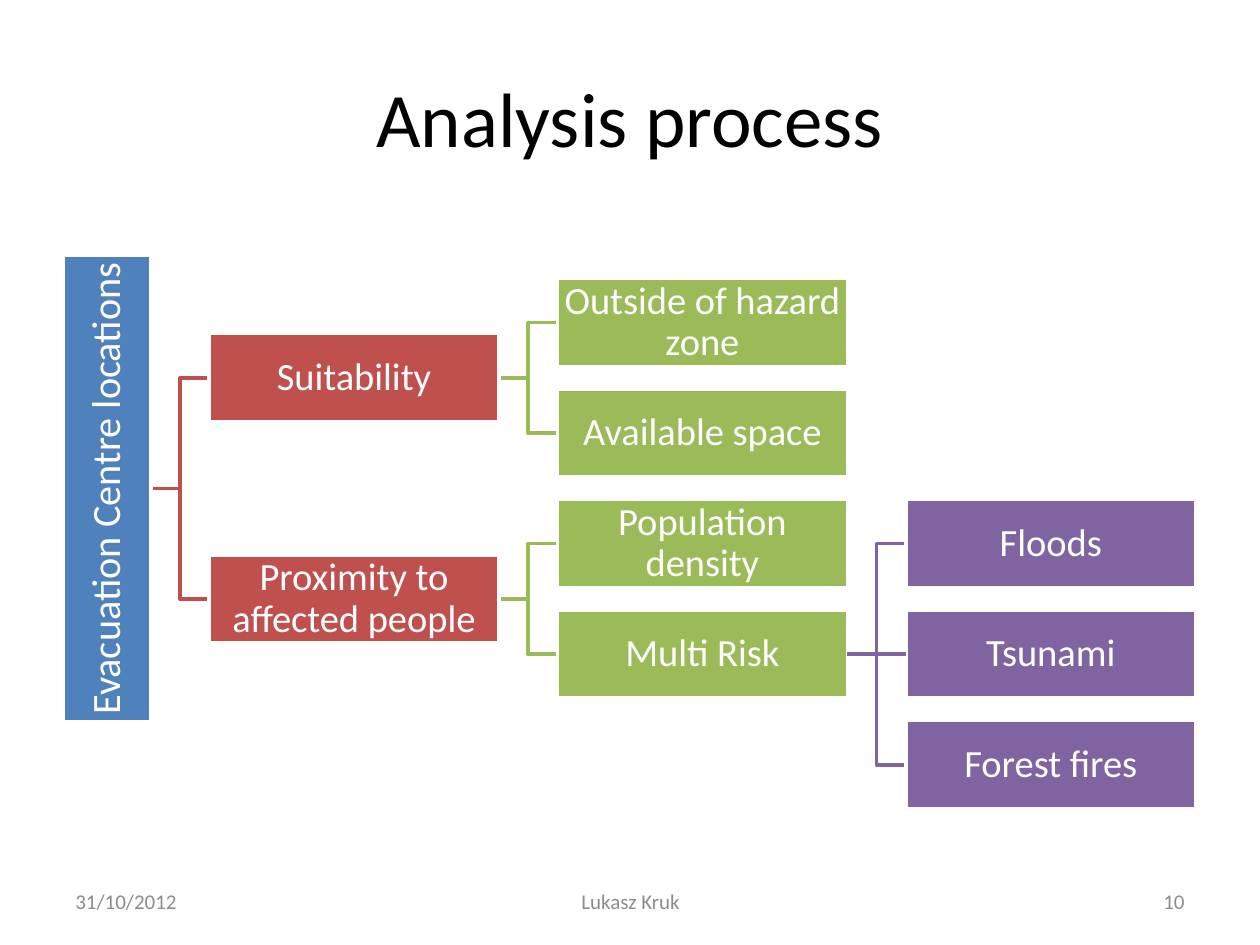
"""Build the Analysis process slide, a horizontal tree of evacuation criteria."""
import dataclasses
import typing

import pptx
import pptx.dml.color
import pptx.enum.shapes
import pptx.enum.text
import pptx.util

Inches = pptx.util.Inches
ALIGN = pptx.enum.text.PP_ALIGN
MIDDLE = pptx.enum.text.MSO_ANCHOR.MIDDLE

FONT = "Calibri"
LEVEL_COLOURS = ["4F81BD", "C0504D", "9BBB59", "8064A2"]
WHITE = "FFFFFF"
BLACK = "000000"
GREY = "8C8C8C"
BOX_WIDTH, BOX_HEIGHT = 2.3, 0.7
ROOT_LENGTH, ROOT_CENTRE = 3.7, 0.85
FIRST_LEFT, COLUMN_STEP = 1.66, 5.53 / 2
FIRST_CENTRE, ROW_STEP = 2.56, 3.51 / 8
LINE_WIDTH = 2
BOX_FRAME = {
    "word_wrap": True,
    "vertical_anchor": MIDDLE,
    "margin_left": Inches(0.02),
    "margin_right": Inches(0.02),
    "margin_top": Inches(0.02),
    "margin_bottom": Inches(0.02),
}
FOOTER_FRAME = {"word_wrap": True, "vertical_anchor": MIDDLE}


@dataclasses.dataclass
class Node:
    label: str
    leaf_row: int = 0
    children: list["Node"] = dataclasses.field(default_factory=list)

    @property
    def row(self) -> float:
        if not self.children:
            return self.leaf_row
        return sum(child.row for child in self.children) / len(self.children)

    @property
    def centre(self) -> float:
        return FIRST_CENTRE + self.row * ROW_STEP


@dataclasses.dataclass
class Footer:
    text: str
    left: float
    width: float
    alignment: typing.Any


TREE = Node("Evacuation Centre locations", children=[
    Node("Suitability", children=[
        Node("Outside of hazard zone", 0),
        Node("Available space", 2),
    ]),
    Node("Proximity to affected people", children=[
        Node("Population density", 4),
        Node("Multi Risk", children=[
            Node("Floods", 4),
            Node("Tsunami", 6),
            Node("Forest fires", 8),
        ]),
    ]),
])

FOOTERS = [
    Footer("31/10/2012", 0.5, 2.33, ALIGN.LEFT),
    Footer("Lukasz Kruk", 3.42, 3.17, ALIGN.CENTER),
    Footer("10", 7.17, 2.33, ALIGN.RIGHT),
]


def rgb(value: str) -> pptx.dml.color.RGBColor:
    return pptx.dml.color.RGBColor.from_string(value)


def apply_format(target: typing.Any, values: dict) -> None:
    for name, value in values.items():
        setattr(target, name, value)


def write_text(shape, text: str, size: float, colour: str, frame: dict, paragraph_format: dict) -> None:
    apply_format(shape.text_frame, frame)
    paragraph = shape.text_frame.paragraphs[0]
    apply_format(paragraph, paragraph_format)
    run = paragraph.add_run()
    run.text = text
    apply_format(run.font, {"name": FONT, "size": pptx.util.Pt(size)})
    run.font.color.rgb = rgb(colour)


def style_line(shape, colour: str) -> None:
    shape.line.width = pptx.util.Pt(LINE_WIDTH)
    shape.line.color.rgb = rgb(colour)


def column_left(level: int) -> float:
    return FIRST_LEFT + (level - 1) * COLUMN_STEP


def right_edge(level: int) -> float:
    return column_left(level) + BOX_WIDTH if level else ROOT_CENTRE + BOX_HEIGHT / 2


def draw_branch(slide, parent: Node, child: Node, level: int) -> None:
    start, end = right_edge(level), column_left(level + 1)
    middle = (start + end) / 2
    points = [(start, parent.centre), (middle, parent.centre), (middle, child.centre), (end, child.centre)]
    corners = [(Inches(x), Inches(y)) for x, y in points]
    builder = slide.shapes.build_freeform(*corners[0], scale=1.0)
    builder.add_line_segments(corners[1:], close=False)
    branch = builder.convert_to_shape()
    branch.shadow.inherit = False
    branch.fill.background()
    style_line(branch, LEVEL_COLOURS[level + 1])


def draw_branches(slide, node: Node, level: int = 0) -> None:
    for child in node.children:
        if child.row != node.row:
            draw_branch(slide, node, child, level)
        draw_branches(slide, child, level + 1)


def draw_box(slide, node: Node, level: int):
    width = BOX_WIDTH if level else ROOT_LENGTH
    left = column_left(level) if level else ROOT_CENTRE - ROOT_LENGTH / 2
    box = slide.shapes.add_shape(
        pptx.enum.shapes.MSO_SHAPE.RECTANGLE,
        Inches(left), Inches(node.centre - BOX_HEIGHT / 2), Inches(width), Inches(BOX_HEIGHT),
    )
    box.rotation = 0 if level else 270
    box.shadow.inherit = False
    box.fill.solid()
    box.fill.fore_color.rgb = rgb(LEVEL_COLOURS[level])
    style_line(box, WHITE)
    write_text(box, node.label, 22 if level else 23, WHITE, BOX_FRAME,
               {"alignment": ALIGN.CENTER, "line_spacing": 0.9})
    return box


def join_boxes(slide, parent_box, child_box, colour: str) -> None:
    connector = slide.shapes.add_connector(pptx.enum.shapes.MSO_CONNECTOR.STRAIGHT, 0, 0, 0, 0)
    connector.begin_connect(parent_box, 3)
    connector.end_connect(child_box, 1)
    style_line(connector, colour)
    properties = connector.line._get_or_add_ln().getparent()
    properties.append(properties.makeelement(pptx.oxml.ns.qn("a:effectLst"), {}))


def draw_boxes(slide, node: Node, level: int = 0):
    box = draw_box(slide, node, level)
    for child in node.children:
        child_box = draw_boxes(slide, child, level + 1)
        if child.row == node.row:
            join_boxes(slide, box, child_box, LEVEL_COLOURS[level + 1])
    return box


def draw_footer(slide, footer: Footer) -> None:
    box = slide.shapes.add_textbox(Inches(footer.left), Inches(6.95), Inches(footer.width), Inches(0.4))
    write_text(box, footer.text, 12, GREY, FOOTER_FRAME, {"alignment": footer.alignment})


def main() -> None:
    presentation = pptx.Presentation()
    apply_format(presentation, {"slide_width": Inches(10), "slide_height": Inches(7.5)})
    slide = presentation.slides.add_slide(presentation.slide_layouts.get_by_name("Title Only"))
    title = slide.shapes.title
    apply_format(title, {"left": Inches(0.5), "top": Inches(0.3), "width": Inches(9), "height": Inches(1.25)})
    write_text(title, "Analysis process", 44, BLACK, {"vertical_anchor": MIDDLE}, {"alignment": ALIGN.CENTER})
    draw_branches(slide, TREE)
    draw_boxes(slide, TREE)
    for footer in FOOTERS:
        draw_footer(slide, footer)
    presentation.save("out.pptx")


if __name__ == "__main__":
    main()
